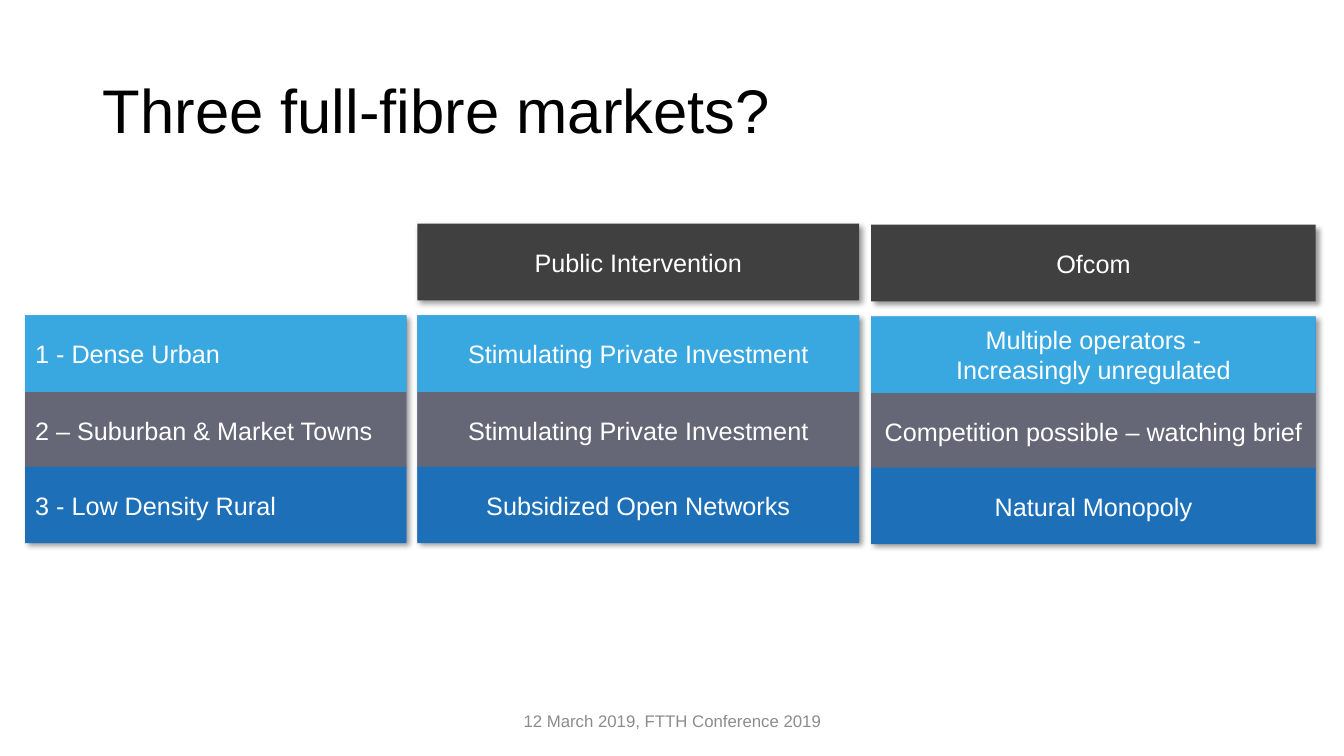
from dataclasses import dataclass

import lxml.etree
import pptx
import pptx.dml.color
import pptx.enum.shapes
import pptx.enum.text
import pptx.oxml.ns
import pptx.util
from pptx.util import Inches

ALIGN = pptx.enum.text.PP_ALIGN
FONT = "Arial"
WHITE, BLACK, GREY, HEADER_FILL, PANEL_FILL = "FFFFFF", "000000", "8C8C8C", "404040", "4472C4"
ROW_FILLS = ["39A8E0", "666776", "1D70B7"]
ROW_OFFSETS = [0, 0.76, 1.5]
ROW_HEIGHT = 0.76
PANEL_HEIGHT = 2.25
HEADER_RISE = 0.91


@dataclass
class Area:
    left: float
    top: float
    width: float
    height: float

    def lengths(self) -> list:
        return [Inches(side) for side in (self.left, self.top, self.width, self.height)]


@dataclass
class Column:
    left: float
    top: float
    width: float
    header: str
    rows: list[str]
    align: ALIGN = ALIGN.CENTER
    inset: tuple[float, float] = (0.04, 0.04)


COLUMNS = [
    Column(0.25, 3.13, 3.78, "",
           ["1 - Dense Urban", "2 – Suburban & Market Towns", "3 - Low Density Rural"],
           ALIGN.LEFT, (0.1, 0.05)),
    Column(4.14, 3.13, 4.38, "Public Intervention",
           ["Stimulating Private Investment", "Stimulating Private Investment",
            "Subsidized Open Networks"]),
    Column(8.64, 3.14, 4.41, "Ofcom",
           ["Multiple operators -\nIncreasingly unregulated",
            "Competition possible – watching brief", "Natural Monopoly"]),
]


def color(value: str) -> pptx.dml.color.RGBColor:
    return pptx.dml.color.RGBColor.from_string(value)


def write(shape, text: str, size: float, ink: str, align: ALIGN,
          inset: tuple[float, float] = (0.1, 0.05), spacing: float = 1.0) -> None:
    frame = shape.text_frame
    frame.word_wrap = True
    frame.vertical_anchor = pptx.enum.text.MSO_ANCHOR.MIDDLE
    frame.margin_left = frame.margin_right = Inches(inset[0])
    frame.margin_top = frame.margin_bottom = Inches(inset[1])
    frame.text = text
    for para in frame.paragraphs:
        para.alignment = align
        para.line_spacing = spacing
        para.font.name = FONT
        para.font.size = pptx.util.Pt(size)
        para.font.color.rgb = color(ink)


def add_block(page, area: Area, fill: str):
    block = page.shapes.add_shape(pptx.enum.shapes.MSO_SHAPE.RECTANGLE, *area.lengths())
    block.shadow.inherit = False
    block.fill.solid()
    block.fill.fore_color.rgb = color(fill)
    block.line.fill.background()
    return block


def add_shadow(block) -> None:
    name = pptx.oxml.ns.qn
    effects = block._element.spPr.find(name("a:effectLst"))
    shadow = lxml.etree.SubElement(
        effects, name("a:outerShdw"), blurRad=str(pptx.util.Pt(4)), dist=str(pptx.util.Pt(3)),
        dir=str(45 * 60000), algn="tl", rotWithShape="0")
    tint = lxml.etree.SubElement(shadow, name("a:srgbClr"), val=BLACK)
    lxml.etree.SubElement(tint, name("a:alpha"), val="40000")


def add_label(page, area: Area, text: str, size: float, ink: str, align: ALIGN,
              spacing: float = 1.0) -> None:
    box = page.shapes.add_textbox(*area.lengths())
    write(box, text, size, ink, align, spacing=spacing)


def add_column(page, column: Column) -> None:
    # Shadowed panel behind the three market rows
    add_shadow(add_block(page, Area(column.left, column.top, column.width, PANEL_HEIGHT),
                         PANEL_FILL))
    for text, fill, offset in zip(column.rows, ROW_FILLS, ROW_OFFSETS):
        area = Area(column.left, column.top + offset, column.width, ROW_HEIGHT)
        write(add_block(page, area, fill), text, 18, WHITE, column.align, column.inset)
    # Column header
    if column.header:
        area = Area(column.left, column.top - HEADER_RISE, column.width, ROW_HEIGHT)
        header = add_block(page, area, HEADER_FILL)
        add_shadow(header)
        write(header, column.header, 18, WHITE, column.align, column.inset)


def main() -> None:
    deck = pptx.Presentation()
    deck.slide_width, deck.slide_height = Inches(13.33), Inches(7.5)
    page = deck.slides.add_slide(deck.slide_layouts[6])

    # Title and footer
    add_label(page, Area(0.92, 0.4, 11.5, 1.45), "Three full-fibre markets?", 44, BLACK,
              ALIGN.LEFT, 0.9)
    add_label(page, Area(4.42, 6.95, 4.5, 0.4), "12 March 2019, FTTH Conference 2019", 12, GREY,
              ALIGN.CENTER)

    # Market columns
    for column in COLUMNS:
        add_column(page, column)

    deck.save("out.pptx")


if __name__ == "__main__":
    main()
